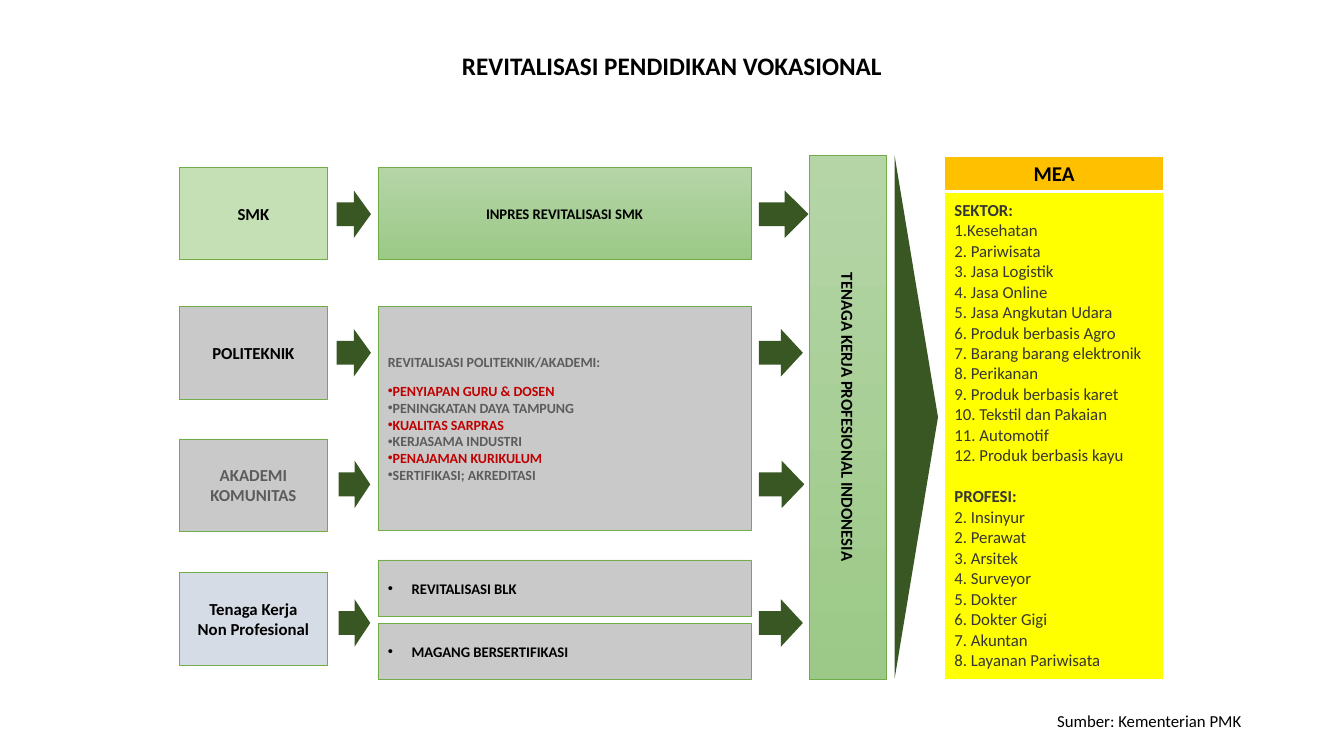
from lxml.etree import SubElement
from pptx import Presentation
from pptx.dml.color import RGBColor
from pptx.enum.shapes import MSO_SHAPE as Shape
from pptx.enum.text import MSO_ANCHOR as Anchor, PP_ALIGN as Align
from pptx.oxml.ns import qn
from pptx.util import Pt

BLACK = RGBColor(0x00, 0x00, 0x00)
WHITE = RGBColor(0xFF, 0xFF, 0xFF)
GRAY_TEXT = RGBColor(0x5C, 0x5C, 0x5C)
DARK_TEXT = RGBColor(0x36, 0x36, 0x35)
RED = RGBColor(0xC0, 0x00, 0x00)
GREEN_LINE = RGBColor(0x70, 0xAD, 0x47)
DARK_GREEN = RGBColor(0x38, 0x57, 0x23)
LIGHT_GREEN = RGBColor(0xC5, 0xE0, 0xB4)
GRAY = RGBColor(0xC9, 0xC9, 0xC9)
BLUE_GRAY = RGBColor(0xD6, 0xDC, 0xE5)
ORANGE = RGBColor(0xFF, 0xC0, 0x00)
YELLOW = RGBColor(0xFF, 0xFF, 0x00)
GREEN_FADE = (RGBColor(0xB5, 0xD5, 0xA7), RGBColor(0x9C, 0xC9, 0x87))

BOX_HEIGHT = 66
ARROW_HEIGHT = 34
STAGE_LEFT, STAGE_WIDTH = 128, 106
PROGRAM_LEFT, PROGRAM_WIDTH = 270, 266.5
OUT_ARROW_LEFT = 542

# label, fill, text colour, box top, arrow middle, (in-arrow left, width), out-arrow width
STAGES = [
    ("SMK", LIGHT_GREEN, BLACK, 119.5, 153, (240.5, 24.5), 35.5),
    ("POLITEKNIK", GRAY, BLACK, 219, 252, (240.5, 24.5), 31.5),
    ("AKADEMI KOMUNITAS", GRAY, GRAY_TEXT, 313.5, 346, (242, 22.5), 32.5),
    ("Tenaga Kerja\nNon Profesional", BLUE_GRAY, BLACK, 409, 445, (242, 22.5), 31.5),
]
REVITALIZATION = [
    ("PENYIAPAN GURU & DOSEN", RED),
    ("PENINGKATAN DAYA TAMPUNG", GRAY_TEXT),
    ("KUALITAS SARPRAS", RED),
    ("KERJASAMA INDUSTRI", GRAY_TEXT),
    ("PENAJAMAN KURIKULUM", RED),
    ("SERTIFIKASI; AKREDITASI", GRAY_TEXT),
]
SECTORS = [
    "Kesehatan", " Pariwisata", " Jasa Logistik", " Jasa Online",
    " Jasa Angkutan Udara", " Produk berbasis Agro", " Barang barang elektronik",
    " Perikanan", " Produk berbasis karet", " Tekstil dan Pakaian",
    " Automotif", " Produk berbasis kayu",
]
PROFESSIONS = [
    "2. Insinyur", "2. Perawat", "3. Arsitek", "4. Surveyor", "5. Dokter",
    "6. Dokter Gigi", "7. Akuntan", "8. Layanan Pariwisata",
]


class Page:
    font = "Calibri"

    def __init__(self, deck):
        self.shapes = deck.slides.add_slide(deck.slide_layouts[6]).shapes

    def style(self, paragraph, size, color=BLACK, bold=True, align=Align.CENTER):
        paragraph.alignment = align
        for span in paragraph.runs:
            span.font.name = self.font
            span.font.size = Pt(size)
            span.font.bold = bold
            span.font.color.rgb = color

    def set_text(self, frame, text, size, **look):
        frame.word_wrap = True
        frame.text = text
        for paragraph in frame.paragraphs:
            self.style(paragraph, size, **look)

    def bullet(self, paragraph, indent=0):
        properties = paragraph._p.get_or_add_pPr()
        properties.set("marL", str(Pt(indent)))
        properties.set("indent", str(-Pt(indent)))
        SubElement(properties, qn("a:buFont"), typeface="Arial")
        SubElement(properties, qn("a:buChar"), char="•")

    def label(self, left, top, width, height, text, size, anchor, **look):
        box = self.shapes.add_textbox(Pt(left), Pt(top), Pt(width), Pt(height))
        box.text_frame.vertical_anchor = anchor
        self.set_text(box.text_frame, text, size, **look)

    def solid(self, kind, left, top, width, height, fill=DARK_GREEN):
        """Add a shape without outline; a pair of colours makes a vertical gradient."""
        shape = self.shapes.add_shape(kind, Pt(left), Pt(top), Pt(width), Pt(height))
        shape.shadow.inherit = False
        shape.line.fill.background()
        if isinstance(fill, RGBColor):
            shape.fill.solid()
            shape.fill.fore_color.rgb = fill
        else:
            shape.fill.gradient()
            shape.fill.gradient_angle = 270
            for stop, color in zip(shape.fill.gradient_stops, fill):
                stop.color.rgb = color
        return shape

    def box(self, left, top, width, height, fill, text, size, **look):
        box = self.solid(Shape.RECTANGLE, left, top, width, height, fill)
        box.line.color.rgb = GREEN_LINE
        box.line.width = Pt(0.5)
        box.text_frame.vertical_anchor = Anchor.MIDDLE
        self.set_text(box.text_frame, text, size, **look)
        return box

    def arrow(self, left, middle, width):
        self.solid(Shape.RIGHT_ARROW, left, middle - ARROW_HEIGHT / 2, width, ARROW_HEIGHT)

    def table(self, left, top, width, row_heights):
        frame = self.shapes.add_table(len(row_heights), 1, Pt(left), Pt(top),
                                      Pt(width), Pt(sum(row_heights)))
        table = frame.table
        table.horz_banding = False
        for row, height in zip(table.rows, row_heights):
            row.height = Pt(height)
        return table

    def cell(self, cell, fill, text, size, borders, **look):
        """Fill a cell; borders maps a:lnL, a:lnR, a:lnT, a:lnB to white line widths."""
        cell.vertical_anchor = Anchor.MIDDLE
        properties = cell._tc.get_or_add_tcPr()
        for side, width in borders.items():
            line = SubElement(properties, qn(side), w=str(Pt(width)))
            paint = SubElement(line, qn("a:solidFill"))
            SubElement(paint, qn("a:srgbClr"), val=str(WHITE))
        cell.fill.solid()
        cell.fill.fore_color.rgb = fill
        self.set_text(cell.text_frame, text, size, **look)


def draw_programs(page):
    page.box(PROGRAM_LEFT, 119.5, PROGRAM_WIDTH, BOX_HEIGHT, GREEN_FADE,
             "INPRES REVITALISASI SMK", 10.5)

    lines = ["REVITALISASI POLITEKNIK/AKADEMI:"] + [text for text, _ in REVITALIZATION]
    box = page.box(PROGRAM_LEFT, 219, PROGRAM_WIDTH, 160, GRAY, "\n".join(lines), 10,
                   color=GRAY_TEXT, align=Align.LEFT)
    items = box.text_frame.paragraphs[1:]
    items[0].space_before = Pt(8.5)
    for paragraph, (_, color) in zip(items, REVITALIZATION):
        page.style(paragraph, 10, color, align=Align.LEFT)
        page.bullet(paragraph)

    for row, text in enumerate(["REVITALISASI BLK", "MAGANG BERSERTIFIKASI"]):
        box = page.box(PROGRAM_LEFT, 400 + 45 * row, PROGRAM_WIDTH, 40.5, GRAY, text, 10.5,
                       align=Align.LEFT)
        page.bullet(box.text_frame.paragraphs[0], 17)


def draw_market(page):
    table = page.table(674.5, 111.5, 157, [25, 349])
    sides = {"a:lnL": 1, "a:lnR": 1}
    page.cell(table.cell(0, 0), ORANGE, "MEA", 15, {**sides, "a:lnT": 1, "a:lnB": 3})

    sectors = [f"{number}.{name}" for number, name in enumerate(SECTORS, 1)]
    lines = ["SEKTOR:", *sectors, "PROFESI:", *PROFESSIONS]
    cell = table.cell(1, 0)
    page.cell(cell, YELLOW, "\n".join(lines), 12, {**sides, "a:lnT": 3, "a:lnB": 1},
              color=DARK_TEXT, bold=False, align=Align.LEFT)
    paragraphs = cell.text_frame.paragraphs
    professions = paragraphs[len(SECTORS) + 1]
    professions.space_before = Pt(14.6)
    for heading in (paragraphs[0], professions):
        page.style(heading, 12, DARK_TEXT, align=Align.LEFT)


def main():
    deck = Presentation()
    deck.slide_width, deck.slide_height = Pt(960), Pt(540)
    page = Page(deck)

    page.label(120, 32.5, 720, 44.5, "REVITALISASI PENDIDIKAN VOKASIONAL", 18, Anchor.TOP)
    for text, fill, color, top, middle, (arrow_left, arrow_width), out_width in STAGES:
        page.box(STAGE_LEFT, top, STAGE_WIDTH, BOX_HEIGHT, fill, text, 12, color=color)
        page.arrow(arrow_left, middle, arrow_width)
        page.arrow(OUT_ARROW_LEFT, middle, out_width)
    draw_programs(page)

    workforce = page.box(578, 111, 55.5, 374, GREEN_FADE,
                         "TENAGA KERJA PROFESIONAL INDONESIA", 12)
    workforce.text_frame._txBody.bodyPr.set("vert", "vert")
    page.solid(Shape.ISOSCELES_TRIANGLE, 467.5, 282.5, 374, 31).rotation = 90
    draw_market(page)
    page.label(678, 500.5, 216, 29, "Sumber: Kementerian PMK", 12, Anchor.MIDDLE,
               bold=False, align=Align.RIGHT)

    deck.save("out.pptx")


if __name__ == "__main__":
    main()
